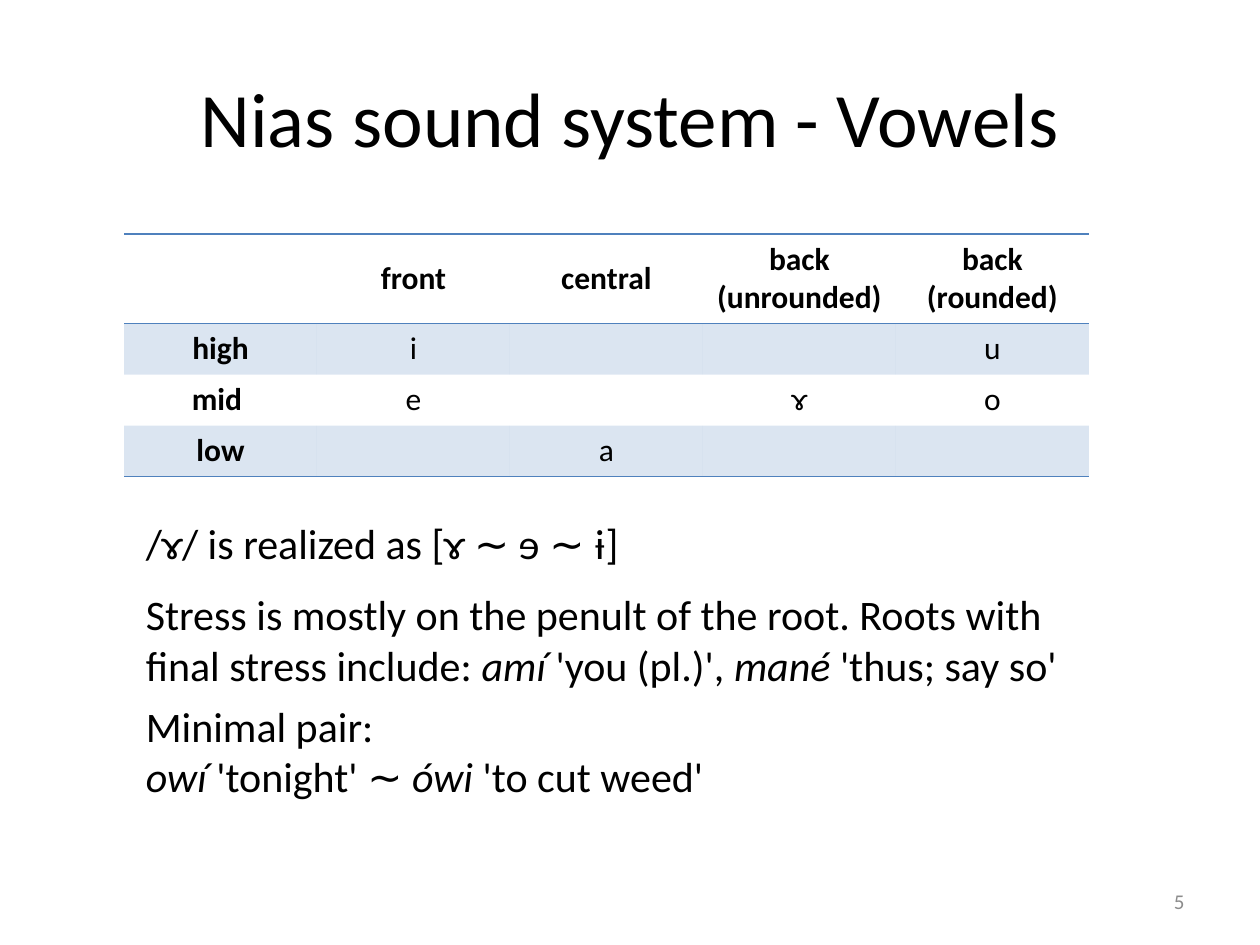
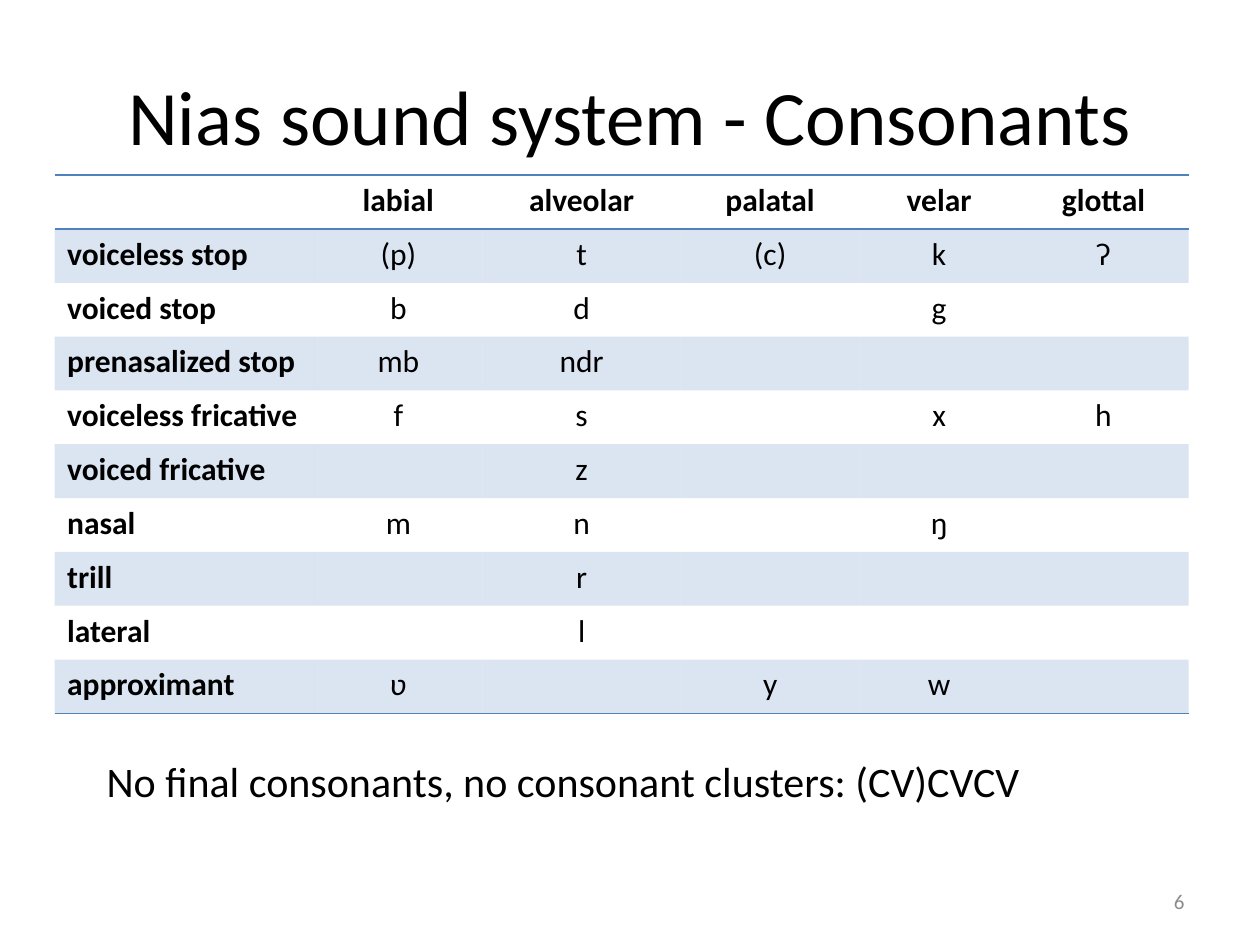
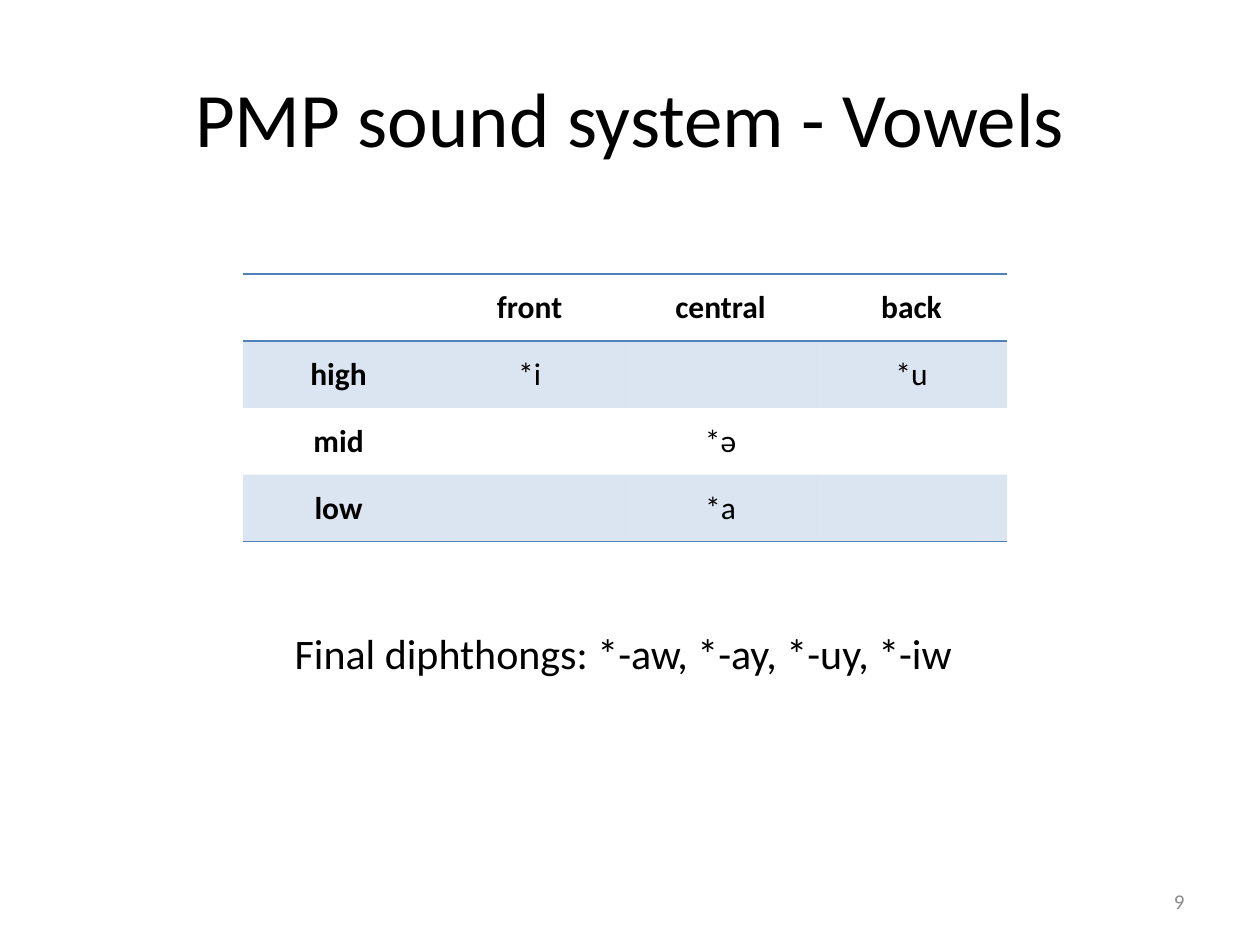
import pptx
import pptx.util
import pptx.oxml
import pptx.oxml.ns
from pptx.dml.color import RGBColor
from pptx.enum.text import MSO_ANCHOR, PP_ALIGN
from pptx.util import Cm

# Shared style
FONT = "Calibri"
BLACK = RGBColor(0x00, 0x00, 0x00)
GREY = RGBColor(0x8C, 0x8C, 0x8C)
BLUE = RGBColor(0x4F, 0x81, 0xBD)
BAND_OPACITY = 20
TITLE_SIZE, NOTE_SIZE, CELL_SIZE, NUMBER_SIZE = 44, 24, 18, 12
PLAIN_TABLE_STYLE = "{2D5ABB26-0587-4C30-8999-92F81FD0307C}"

# Table contents
NIAS_VOWELS = [
    ["", "front", "central", "back\n(unrounded)", "back\n(rounded)"],
    ["high", "i", "", "", "u"],
    ["mid ", "e", "", "ɤ", "o"],
    ["low", "", "a", "", ""],
]
NIAS_CONSONANTS = [
    ["", "labial", "alveolar", "palatal", "velar", "glottal"],
    ["voiceless stop", "(p)", "t", "(c)", "k", "ʔ"],
    ["voiced stop", "b", "d", "", "g", ""],
    ["prenasalized stop", "mb", "ndr", "", "", ""],
    ["voiceless fricative", "f", "s", "", "x", "h"],
    ["voiced fricative", "", "z", "", "", ""],
    ["nasal", "m", "n", "", "ŋ", ""],
    ["trill", "", "r", "", "", ""],
    ["lateral", "", "l", "", "", ""],
    ["approximant", "ʋ", "", "y", "w", ""],
]
PMP_VOWELS = [
    ["", "front", "central", "back"],
    ["high", "*i", "", "*u"],
    ["mid", "", "*ə", ""],
    ["low", "", "*a", ""],
]

# Notes: each paragraph is (space after, runs), each run is (text, italic)
NIAS_VOWEL_NOTES = [
    (12, [("/ɤ/ is realized as [ɤ ∼ ɘ ∼ ɨ]", False)]),
    (6, [("Stress is mostly on the penult of the root. Roots with final stress include: ", False),
         ("amí", True), (" 'you (pl.)', ", False),
         ("mané", True), (" 'thus; say so'", False)]),
    (0, [("Minimal pair:", False)]),
    (0, [("owí", True), (" 'tonight' ∼ ", False),
         ("ówi", True), (" 'to cut weed'", False)]),
]
NIAS_CONSONANT_NOTES = [(0, [("No final consonants, no consonant clusters: (CV)CVCV", False)])]
PMP_VOWEL_NOTES = [(0, [("Final diphthongs: *-aw, *-ay, *-uy, *-iw", False)])]


def add_span(para, text, size, color=BLACK, bold=False, italic=False):
    span = para.add_run()
    span.text = text
    font = span.font
    font.name, font.size, font.color.rgb = FONT, pptx.util.Pt(size), color
    font.bold, font.italic = bold, italic


def add_box(page, left, top, width, height, anchor=MSO_ANCHOR.TOP):
    box = page.shapes.add_textbox(Cm(left), Cm(top), Cm(width), Cm(height))
    box.text_frame.word_wrap = True
    box.text_frame.vertical_anchor = anchor
    return box.text_frame


def add_title(page, text, top=0.76, height=3.18):
    para = add_box(page, 1.27, top, 22.86, height, MSO_ANCHOR.MIDDLE).paragraphs[0]
    para.alignment = PP_ALIGN.CENTER
    add_span(para, text, TITLE_SIZE)


def add_page_number(page, number):
    para = add_box(page, 18.2, 17.66, 5.93, 1.01, MSO_ANCHOR.MIDDLE).paragraphs[0]
    para.alignment = PP_ALIGN.RIGHT
    add_span(para, str(number), NUMBER_SIZE, GREY)


def add_notes(page, left, top, width, height, notes):
    frame = add_box(page, left, top, width, height)
    for index, (space_after, spans) in enumerate(notes):
        para = frame.add_paragraph() if index else frame.paragraphs[0]
        para.space_after = pptx.util.Pt(space_after)
        for text, italic in spans:
            add_span(para, text, NOTE_SIZE, italic=italic)


def shade(cell):
    cell.fill.solid()
    cell.fill.fore_color.rgb = BLUE
    color = cell._tc.tcPr.find(".//" + pptx.oxml.ns.qn("a:srgbClr"))
    color.append(pptx.oxml.parse_xml(
        f'<a:alpha {pptx.oxml.ns.nsdecls("a")} val="{BAND_OPACITY * 1000}"/>'))


def rule(cell, sides):
    """Draw a thin line on the given sides, "T" and "B" in that order."""
    for index, side in enumerate(sides):
        cell._tc.get_or_add_tcPr().insert(index, pptx.oxml.parse_xml(
            f'<a:ln{side} {pptx.oxml.ns.nsdecls("a")} w="12700"><a:solidFill>'
            f'<a:srgbClr val="{BLUE}"/></a:solidFill></a:ln{side}>'))


def add_sound_table(page, left, top, widths, row_height, rows, header_height=None,
                    label_align=PP_ALIGN.CENTER, header_anchor=MSO_ANCHOR.MIDDLE,
                    body_anchor=MSO_ANCHOR.TOP):
    heights = [header_height or row_height] + [row_height] * (len(rows) - 1)
    frame = page.shapes.add_table(len(rows), len(widths), Cm(left), Cm(top),
                                  Cm(sum(widths)), Cm(sum(heights)))
    table = frame.table
    table._tbl.tblPr.find(pptx.oxml.ns.qn("a:tableStyleId")).text = PLAIN_TABLE_STYLE
    for column, width in zip(table.columns, widths):
        column.width = Cm(width)
    for r, (words, height) in enumerate(zip(rows, heights)):
        table.rows[r].height = Cm(height)
        for c, text in enumerate(words):
            cell = table.cell(r, c)
            cell.vertical_anchor = body_anchor if r else header_anchor
            # Odd rows carry the band; lines frame the header and close the table
            if r % 2:
                shade(cell)
            else:
                cell.fill.background()
            if r == 0:
                rule(cell, "TB")
            elif r == len(rows) - 1:
                rule(cell, "B")
            for index, line in enumerate(text.split("\n") if text else []):
                frame = cell.text_frame
                para = frame.add_paragraph() if index else frame.paragraphs[0]
                para.alignment = PP_ALIGN.CENTER if c else label_align
                add_span(para, line, CELL_SIZE, bold=r == 0 or c == 0)


def main():
    deck = pptx.Presentation()
    deck.slide_width, deck.slide_height = Cm(25.4), Cm(19.05)
    blank = deck.slide_layouts[6]

    # Nias vowels
    page = deck.slides.add_slide(blank)
    add_title(page, "Nias sound system - Vowels")
    add_sound_table(page, 2.5, 4.72, [3.89] * 5, 1.03, NIAS_VOWELS, header_height=1.8)
    add_notes(page, 2.69, 10.31, 19, 6.02, NIAS_VOWEL_NOTES)
    add_page_number(page, 5)

    # Nias consonants
    page = deck.slides.add_slide(blank)
    add_title(page, "Nias sound system - Consonants", top=1.12, height=2.39)
    add_sound_table(page, 1.1, 3.53, [5.23, 3.4, 3.99, 3.61, 3.2, 3.43], 1.085,
                    NIAS_CONSONANTS, label_align=PP_ALIGN.LEFT,
                    header_anchor=MSO_ANCHOR.TOP)
    add_notes(page, 1.9, 15.11, 19.81, 1.27, NIAS_CONSONANT_NOTES)
    add_page_number(page, 6)

    # PMP vowels
    page = deck.slides.add_slide(blank)
    add_title(page, "PMP sound system - Vowels")
    add_sound_table(page, 4.9, 5.52, [3.85] * 4, 1.35, PMP_VOWELS,
                    body_anchor=MSO_ANCHOR.MIDDLE)
    add_notes(page, 5.69, 12.52, 13.79, 1.27, PMP_VOWEL_NOTES)
    add_page_number(page, 9)

    deck.save("out.pptx")


if __name__ == "__main__":
    main()
